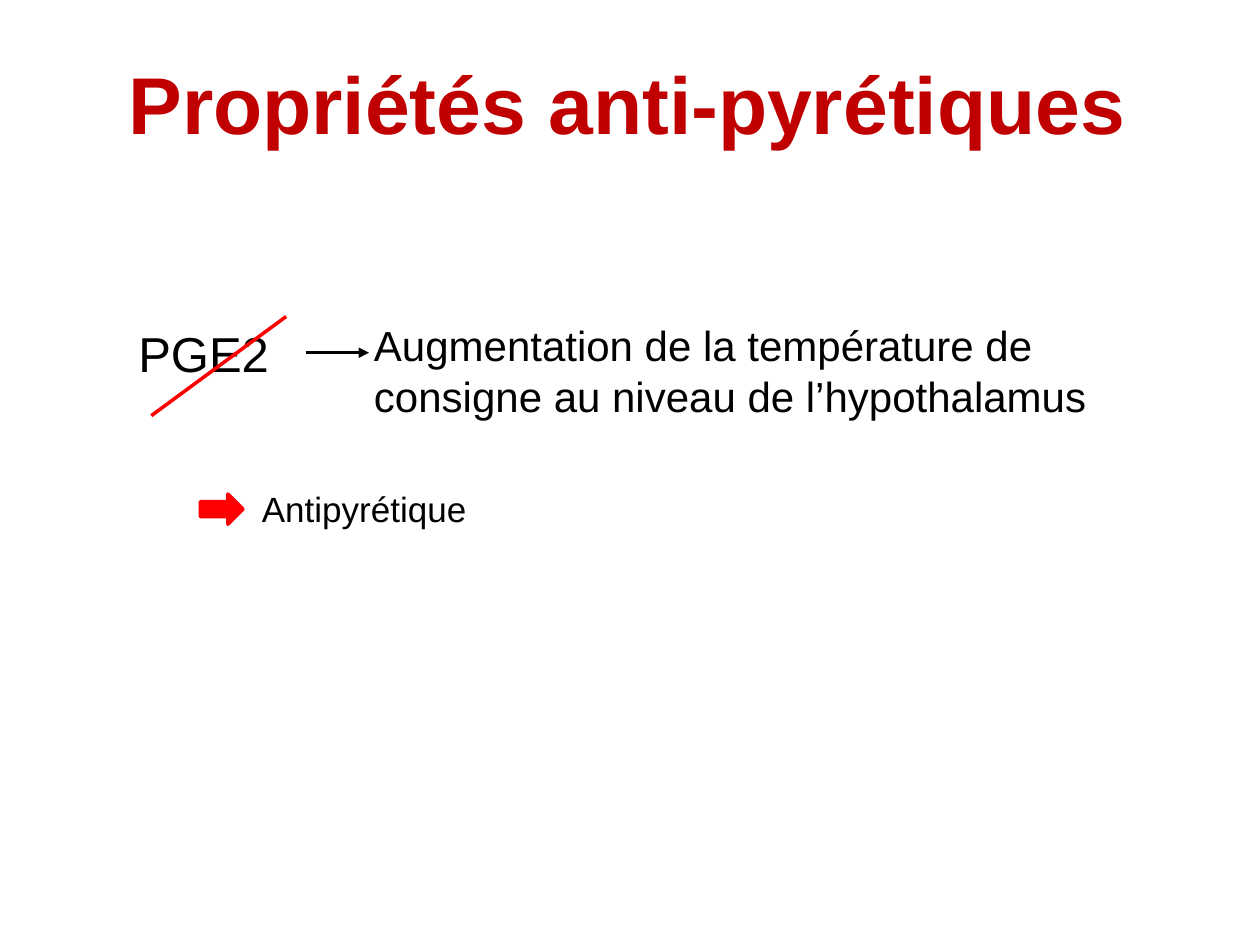
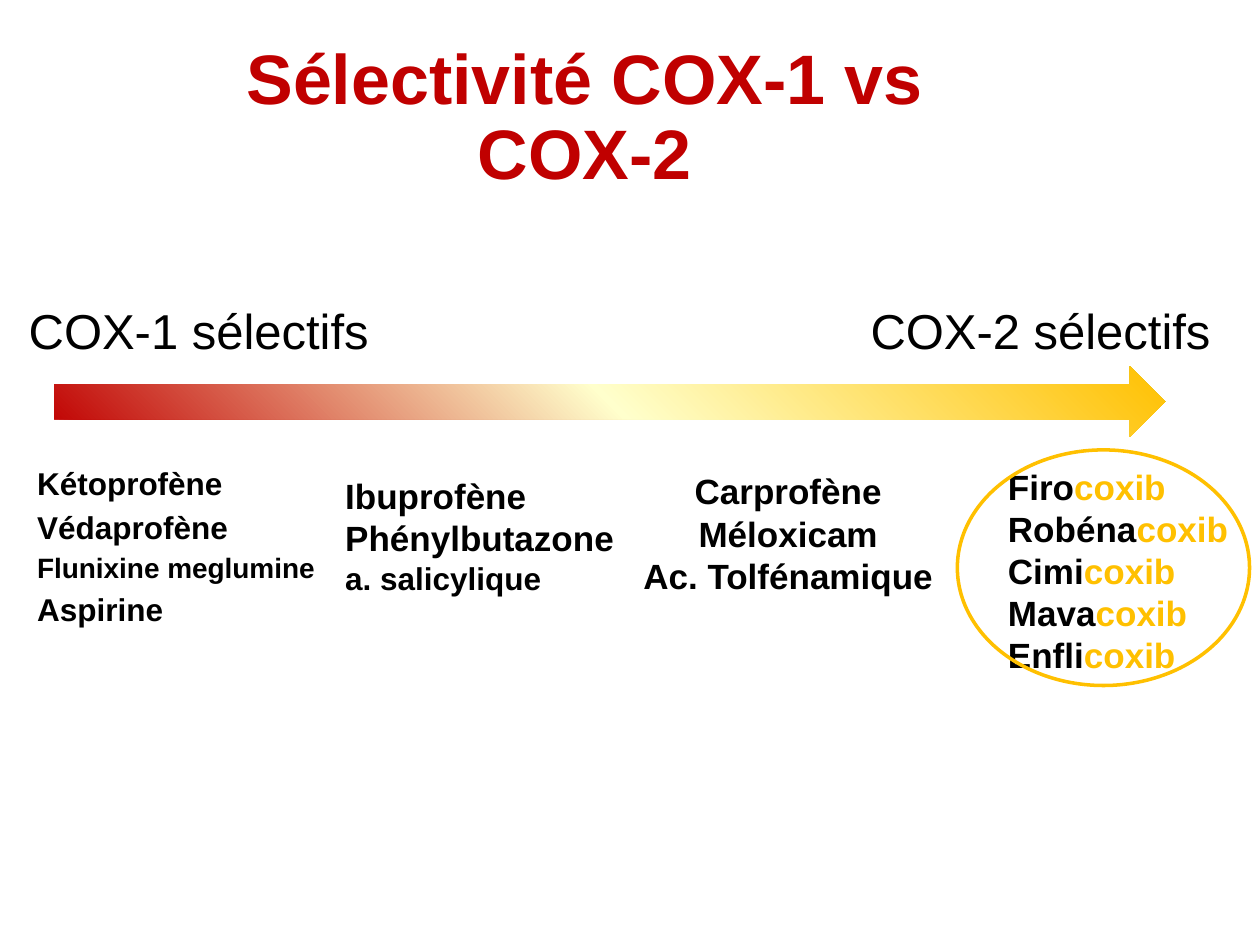
from lxml import etree
from pptx import Presentation
from pptx.dml.color import RGBColor
from pptx.enum.shapes import MSO_CONNECTOR, MSO_SHAPE
from pptx.enum.text import MSO_ANCHOR, MSO_AUTO_SIZE, PP_ALIGN
from pptx.oxml import parse_xml
from pptx.oxml.ns import nsdecls, qn
from pptx.util import Cm, Pt

STRAIGHT = MSO_CONNECTOR.STRAIGHT
ARROW, ELLIPSE = MSO_SHAPE.RIGHT_ARROW, MSO_SHAPE.OVAL
MIDDLE = MSO_ANCHOR.MIDDLE
GROW, FIXED = MSO_AUTO_SIZE.SHAPE_TO_FIT_TEXT, MSO_AUTO_SIZE.NONE
CENTER = PP_ALIGN.CENTER

COLORS = {
    "title": "C00000",
    "text": "000000",
    "alert": "FF0000",
    "gold": "FFC000",
    "cream": "FFFFCC",
}
FONT = "Arial"
LINE_WIDTH = Pt(2)
TITLE_SPACING = {"alignment": CENTER, "line_spacing": 0.9}


def color(name):
    return RGBColor.from_string(COLORS[name])


def set_all(target, values):
    for name, value in values.items():
        setattr(target, name, value)


class SlideBuilder:
    def __init__(self, deck):
        self.deck = deck
        self.shapes = None

    def new_page(self):
        self.page = self.deck.slides.add_slide(self.deck.slide_layouts[6])
        self.shapes = self.page.shapes

    def start_group(self):
        self.shapes = self.page.shapes.add_group_shape().shapes

    def end_group(self):
        self.shapes = self.page.shapes

    def text(self, place, lines, size, bold=False, frame=None, paragraph=None,
             margin=0, indent=0, space_percent=None):
        box = self.shapes.add_textbox(*map(Cm, place))
        set_all(box.text_frame, {"word_wrap": True, "auto_size": GROW, **(frame or {})})
        for number, line in enumerate(lines):
            para = box.text_frame.paragraphs[0] if number == 0 else box.text_frame.add_paragraph()
            set_all(para, paragraph or {})
            properties = para._p.get_or_add_pPr()
            properties.set("marL", str(Cm(margin)))
            properties.set("indent", str(Cm(indent)))
            if space_percent:
                para.space_before = Pt(0)
                before = properties.find(qn("a:spcBef"))
                before.remove(before[0])
                etree.SubElement(before, qn("a:spcPct"), val=str(space_percent * 1000))
            content, line_size = line if isinstance(line, tuple) else (line, size)
            parts = content if isinstance(content, list) else [(content, "text")]
            for words, shade in parts:
                span = para.add_run()
                span.text = words
                set_all(span.font, {"name": FONT, "size": Pt(line_size), "bold": bold})
                span.font.color.rgb = color(shade)

    def title(self, place, words, size):
        self.text(place, [[(words, "title")]], size, True,
                  {"vertical_anchor": MIDDLE, "auto_size": FIXED}, TITLE_SPACING)

    def label(self, place, words, size):
        self.text(place, [words], size, frame={"word_wrap": False})

    def shape(self, kind, place, fill=None, line=None):
        shape = self.shapes.add_shape(kind, *map(Cm, place))
        shape.shadow.inherit = False
        if fill:
            shape.fill.solid()
            shape.fill.fore_color.rgb = color(fill)
        else:
            shape.fill.background()
        if line:
            shape.line.color.rgb = color(line)
            shape.line.width = LINE_WIDTH
        else:
            shape.line.fill.background()
        return shape

    def gradient_shape(self, kind, place, stops):
        shape = self.shape(kind, place)
        marks = "".join(
            f'<a:gs pos="{position * 1000}"><a:srgbClr val="{COLORS[name]}"/></a:gs>'
            for position, name in stops)
        gradient = parse_xml(
            f'<a:gradFill {nsdecls("a")} rotWithShape="1"><a:gsLst>{marks}</a:gsLst>'
            '<a:path path="circle"><a:fillToRect l="100000" b="100000"/></a:path></a:gradFill>')
        properties = shape._element.spPr
        properties.replace(properties.find(qn("a:noFill")), gradient)

    def line(self, start, end, shade, arrow=False):
        line = self.shapes.add_connector(STRAIGHT, *map(Cm, start + end))
        line.line.color.rgb = color(shade)
        line.line.width = LINE_WIDTH
        if arrow:
            etree.SubElement(line.line._get_or_add_ln(), qn("a:tailEnd"), type="triangle")
        etree.SubElement(line._element.spPr, qn("a:effectLst"))


def build_antipyretic(builder):
    builder.new_page()
    builder.title((0.86, 1.24, 23.55, 1.9), "Propriétés anti-pyrétiques", 46)
    builder.start_group()
    builder.label((2.54, 6.4, 3.73, 1.45), "PGE2", 28)
    builder.text((5.23, 6.32, 19.18, 2.31),
                 ["Augmentation de la température de consigne au niveau de l’hypothalamus"],
                 24, paragraph={"level": 1}, margin=2.06)
    builder.line((6.17, 7.11), (7.44, 7.11), "text", arrow=True)
    builder.line((3.05, 8.38), (5.77, 6.38), "alert")
    builder.end_group()
    builder.shape(ARROW, (4.04, 9.96, 0.86, 0.61), "alert", "alert")
    builder.label((5.03, 9.7, 4.88, 1.12), "Antipyrétique", 20)


def build_selectivity(builder):
    builder.new_page()
    hanging = {"margin": 0.97, "indent": -0.97}
    builder.text((0.3, 9.32, 7.19, 4.24),
                 ["Kétoprofène", "Védaprofène", ("Flunixine meglumine", 16), "Aspirine"],
                 18, True, {"auto_size": FIXED}, {"line_spacing": 0.9},
                 margin=0.2, space_percent=30)
    builder.text((6.71, 9.45, 6.2, 2.69),
                 ["Ibuprofène", "Phénylbutazone", ("a. salicylique", 18)],
                 20, True, {"auto_size": FIXED}, **hanging)
    builder.text((9.91, 9.35, 11.96, 2.82),
                 ["Carprofène", "Méloxicam", "Ac. Tolfénamique"],
                 20, True, paragraph={"alignment": CENTER})
    builder.text((20.07, 9.25, 5.33, 4.55),
                 [[(stem, "text"), ("coxib", "gold")]
                  for stem in ("Firo", "Robéna", "Cimi", "Mava", "Enfli")],
                 20, True, **hanging)
    for left, enzyme in ((0.33, "COX-1"), (17.3, "COX-2")):
        builder.label((left, 5.94, 7.44, 1.45), f"{enzyme} sélectifs", 28)
    builder.gradient_shape(ARROW, (1.09, 7.39, 22.4, 1.42),
                           ((0, "gold"), (50, "cream"), (100, "title")))
    builder.title((2.77, 1.32, 18.03, 2.18), "Sélectivité COX-1 vs COX-2", 40)
    builder.shape(ELLIPSE, (19.3, 9.07, 5.89, 4.75), line="gold")


def main():
    deck = Presentation()
    set_all(deck, {"slide_width": Cm(25.4), "slide_height": Cm(19.05)})
    builder = SlideBuilder(deck)
    build_antipyretic(builder)
    build_selectivity(builder)
    deck.save("out.pptx")


if __name__ == "__main__":
    main()
